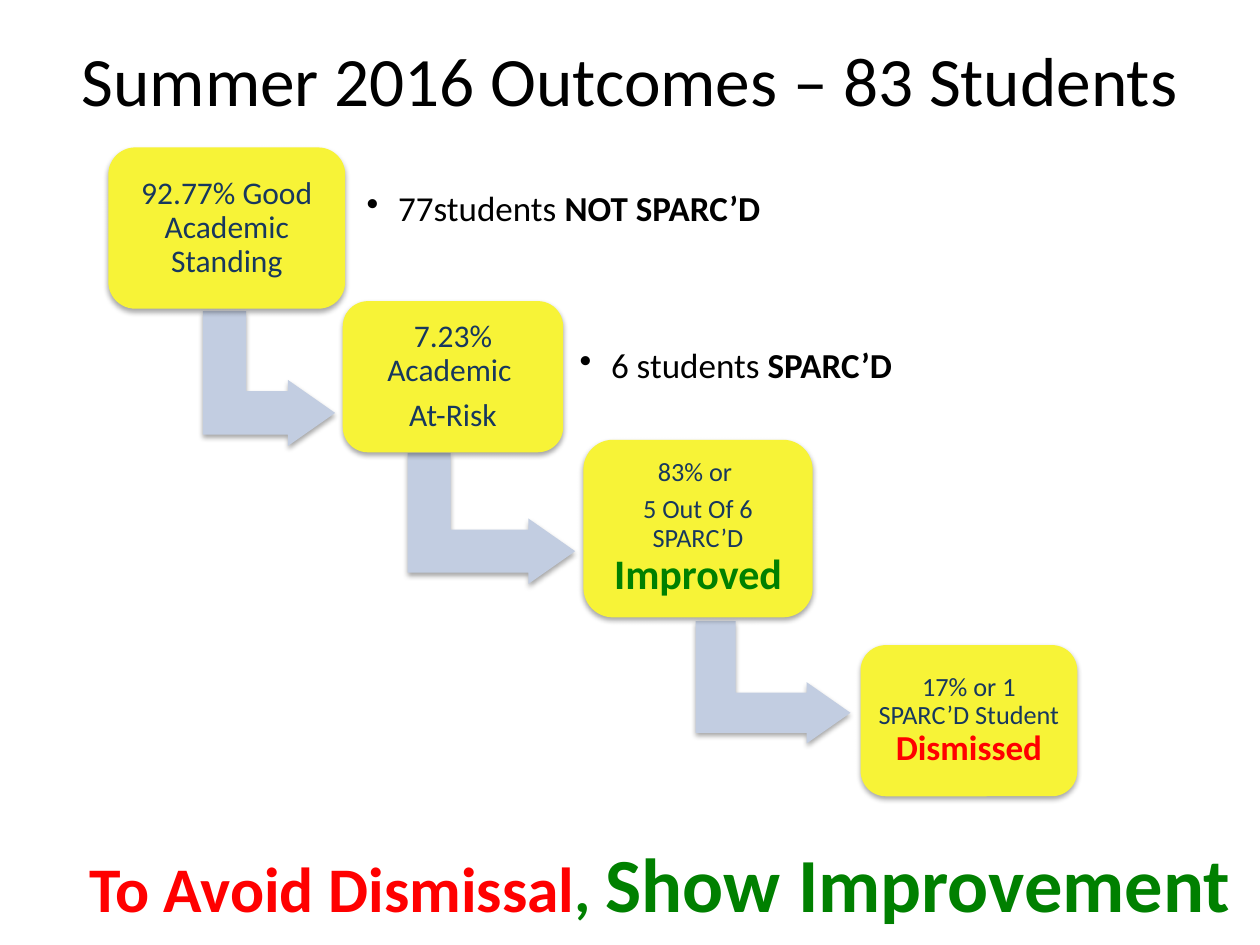
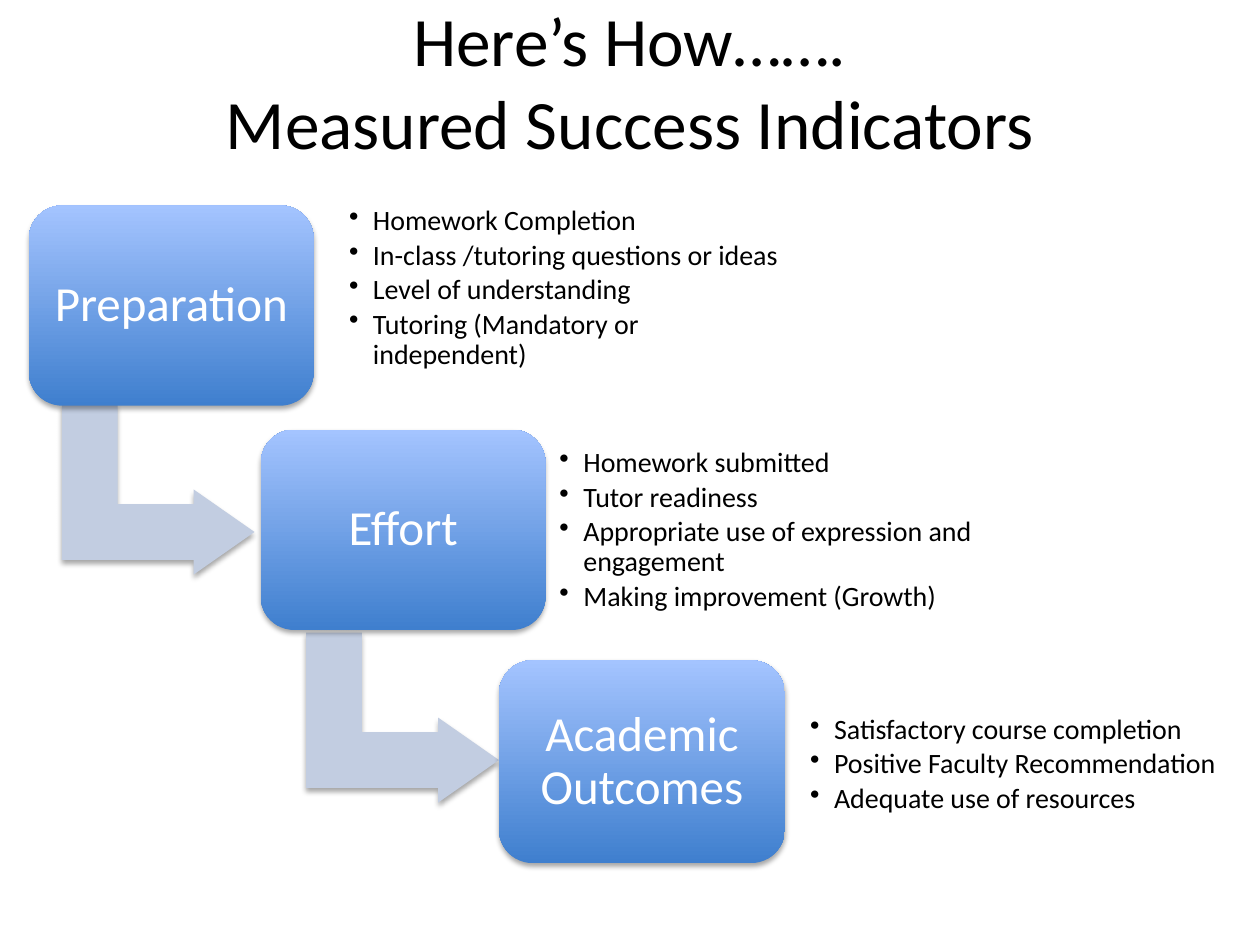
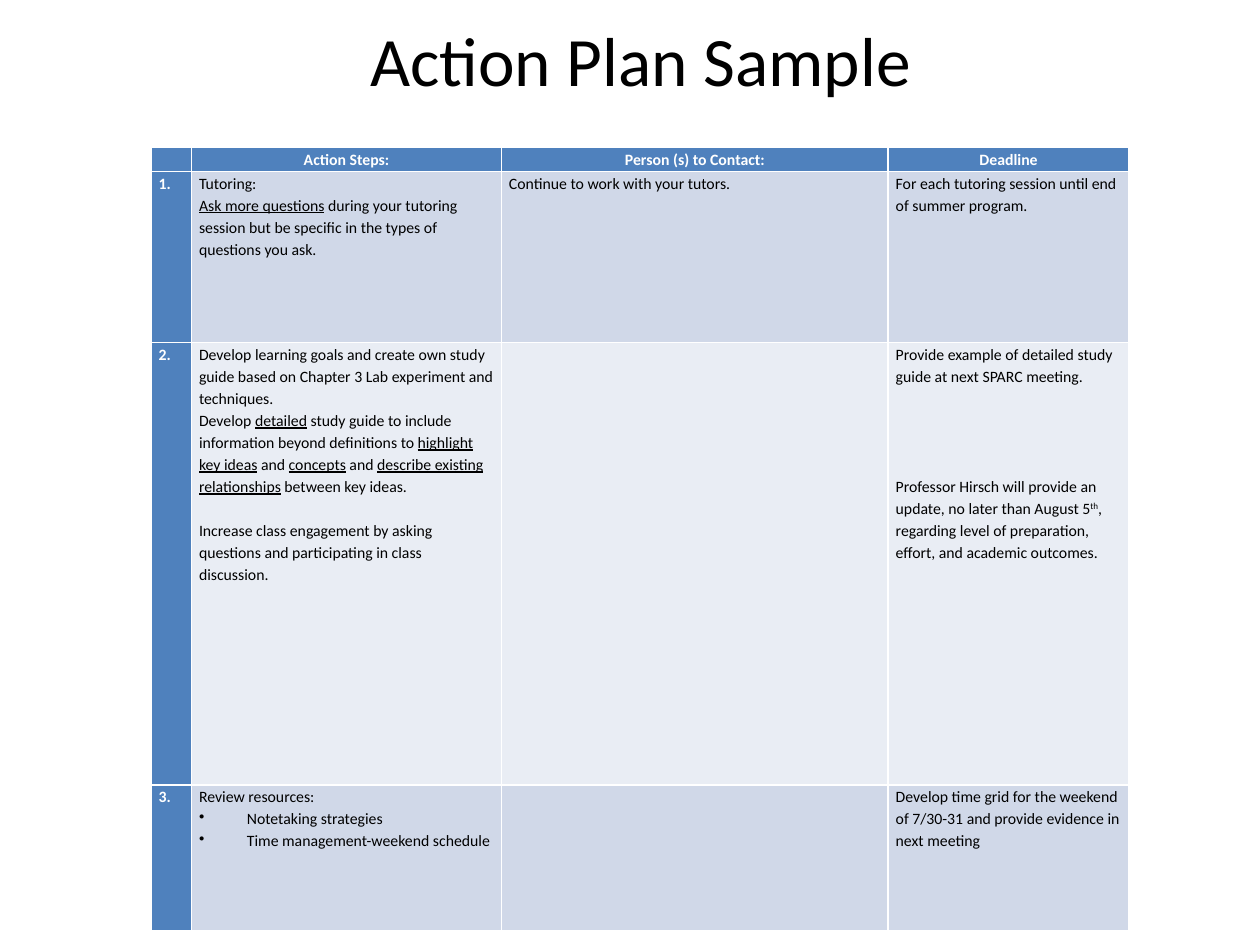
import lxml.etree
import pptx
import pptx.dml.color
import pptx.enum.shapes
import pptx.enum.text
import pptx.oxml.ns
import pptx.util

BLACK = pptx.dml.color.RGBColor(0x00, 0x00, 0x00)
WHITE = pptx.dml.color.RGBColor(0xFF, 0xFF, 0xFF)
NAVY = pptx.dml.color.RGBColor(0x17, 0x37, 0x5E)
GREEN = pptx.dml.color.RGBColor(0x00, 0x80, 0x00)
RED = pptx.dml.color.RGBColor(0xFF, 0x00, 0x00)
YELLOW = pptx.dml.color.RGBColor(0xF7, 0xF3, 0x37)
PALE = pptx.dml.color.RGBColor(0xC2, 0xCD, 0xE1)
DEEP = pptx.dml.color.RGBColor(0x3F, 0x7F, 0xCE)
LIGHT = pptx.dml.color.RGBColor(0xA4, 0xC4, 0xFF)
HEAD = pptx.dml.color.RGBColor(0x4F, 0x81, 0xBD)
BANDS = [pptx.dml.color.RGBColor(0xD0, 0xD8, 0xE8),
         pptx.dml.color.RGBColor(0xE9, 0xED, 0xF4)]

FONT = "Calibri"
CENTER = pptx.enum.text.PP_ALIGN.CENTER
ROUND = pptx.enum.shapes.MSO_SHAPE.ROUNDED_RECTANGLE
BENT = pptx.enum.shapes.MSO_SHAPE.BENT_UP_ARROW
qn = pptx.oxml.ns.qn


def write(frame, text, size=18, color=BLACK, bold=False, align=None,
          lines=None, before=0, after=0, bullet=0):
    """Add one paragraph; text is a string or a list of (text, run format)."""
    para = frame.add_paragraph() if frame.text else frame.paragraphs[0]
    para.alignment = align
    para.line_spacing = lines
    para.space_before = pptx.util.Pt(before)
    para.space_after = pptx.util.Pt(after)
    if bullet:
        props = para._p.get_or_add_pPr()
        indent = pptx.util.Inches(bullet)
        props.set("marL", str(indent))
        props.set("indent", str(-indent))
        lxml.etree.SubElement(props, qn("a:buChar"), char="•")
    for part, look in [(text, {})] if isinstance(text, str) else text:
        if part == "\n":
            para.add_line_break()
            continue
        run = para.add_run()
        run.text = part
        font = run.font
        font.name = FONT
        font.size = pptx.util.Pt(look.get("size", size))
        font.color.rgb = look.get("color", color)
        font.bold = look.get("bold", bold)
        if "under" in look:
            font.underline = True
        if "raised" in look:
            font._element.set("baseline", "30000")


def draw(slide, kind, box, color, *adjust):
    """Add a borderless shape with the soft shadow."""
    shape = slide.shapes.add_shape(kind, *map(pptx.util.Inches, box))
    for i, value in enumerate(adjust):
        shape.adjustments[i] = value
    shape.fill.solid()
    shape.fill.fore_color.rgb = color
    shape.line.fill.background()
    effects = lxml.etree.SubElement(shape._element.spPr, qn("a:effectLst"))
    shadow = lxml.etree.SubElement(
        effects, qn("a:outerShdw"), blurRad=str(pptx.util.Pt(3.1)),
        dist=str(pptx.util.Pt(1.8)), dir="5400000", rotWithShape="0")
    tint = lxml.etree.SubElement(shadow, qn("a:srgbClr"), val="000000")
    lxml.etree.SubElement(tint, qn("a:alpha"), val="35000")
    return shape


BOLD = {"bold": True}
UNDER = {"under": True}

flows = [
    {
        "title": "Summer 2016 Outcomes – 83 Students",
        "place": (0.5, 0, 9, 1.25),
        "arrows": [(1.6, 2.48, 1.07, 1.05), (3.38, 3.45, 1.04, 1.33),
                   (5.65, 4.8, 0.97, 1.23)],
        "fill": YELLOW, "ink": NAVY,
        "steps": [
            ((0.86, 1.17, 1.88, 1.28), 18, 0.07, ["92.77% Good Academic Standing"]),
            ((2.72, 2.39, 1.75, 1.2), 18, 0.07, ["7.23% Academic ", "At-Risk"]),
            ((4.63, 3.49, 1.82, 1.41), 15, 0.06,
             ["83% or ", [("5 Out Of 6 SPARC’D ", {}),
                          ("Improved", {"size": 24, "color": GREEN, "bold": True})]]),
            ((6.83, 5.12, 1.72, 1.2), 15, 0.06,
             [[("17% or 1 SPARC’D Student ", {}),
               ("Dismissed", {"size": 20, "color": RED, "bold": True})]]),
        ],
        "size": 20, "inset": 0.08, "bullet": 0.25,
        "notes": [
            ((2.83, 1.45, 3.98, 0.44), [[("77students ", {}), ("NOT SPARC’D", BOLD)]]),
            ((4.52, 2.54, 2.85, 0.75), [[("6 students ", {}), ("SPARC’D", BOLD)]]),
        ],
    },
    {
        "title": [("Here’s How…….", {}), ("\n", {}),
                  ("Measured Success Indicators", {})],
        "place": (0.5, 0.01, 9, 1.25),
        "arrows": [(0.58, 3.12, 1.35, 1.53), (2.52, 4.93, 1.35, 1.53)],
        "fill": None, "ink": WHITE,
        "steps": [
            ((0.23, 1.63, 2.26, 1.59), 28, 0.12, ["Preparation"]),
            ((2.07, 3.41, 2.26, 1.59), 28, 0.12, ["Effort"]),
            ((3.96, 5.24, 2.27, 1.61), 28, 0.12, ["Academic Outcomes"]),
        ],
        "size": 16, "inset": 0.07, "bullet": 0.19,
        "notes": [
            ((2.7, 1.73, 3.71, 1.12),
             ["Homework Completion", "In-class /tutoring questions or ideas",
              "Level of understanding", "Tutoring (Mandatory or independent)"]),
            ((4.37, 3.57, 3.75, 1.28),
             ["Homework submitted", "Tutor readiness",
              "Appropriate use of expression and engagement",
              "Making improvement (Growth)"]),
            ((6.36, 5.4, 3.42, 1.34),
             ["Satisfactory course completion", "Positive Faculty Recommendation",
              "Adequate use of resources"]),
        ],
    },
]
plan = {"title": "Action Plan Sample", "place": (1.82, 0.24, 6.53, 0.46)}

deck = pptx.Presentation()
deck.slide_width = pptx.util.Inches(10)
deck.slide_height = pptx.util.Inches(7.5)

# Titles
slides = []
for page in flows + [plan]:
    slide = deck.slides.add_slide(deck.slide_layouts[5])
    slides.append(slide)
    title = slide.shapes.title
    title.left, title.top, title.width, title.height = map(
        pptx.util.Inches, page["place"])
    title.text_frame.word_wrap = True
    title.text_frame.auto_size = pptx.enum.text.MSO_AUTO_SIZE.NONE
    title.text_frame.vertical_anchor = pptx.enum.text.MSO_ANCHOR.MIDDLE
    write(title.text_frame, page["title"], size=39.6, align=CENTER)

# Step-down flows
for slide, flow in zip(slides, flows):
    for box in flow["arrows"]:
        draw(slide, BENT, box, PALE, 0.328, 0.25, 0.358).rotation = 90

    blocks = []
    for box, size, inset, paras in flow["steps"]:
        step = draw(slide, ROUND, box, flow["fill"] or DEEP, 0.167)
        if not flow["fill"]:
            step.fill.gradient()
            step.fill.gradient_angle = 90
            for stop, color in zip(step.fill.gradient_stops, (DEEP, LIGHT)):
                stop.color.rgb = color
        look = {"size": size, "color": flow["ink"], "align": CENTER,
                "after": 0.35 * size}
        blocks.append((step.text_frame, inset, paras, look))
    for box, paras in flow["notes"]:
        note = slide.shapes.add_textbox(*map(pptx.util.Inches, box))
        look = {"size": flow["size"], "bullet": flow["bullet"],
                "after": 0.15 * flow["size"]}
        blocks.append((note.text_frame, flow["inset"], paras, look))

    for frame, inset, paras, look in blocks:
        frame.word_wrap = True
        frame.vertical_anchor = pptx.enum.text.MSO_ANCHOR.MIDDLE
        frame.margin_left = frame.margin_right = pptx.util.Inches(inset)
        frame.margin_top = frame.margin_bottom = pptx.util.Inches(inset)
        for text in paras:
            write(frame, text, lines=0.9, **look)

# Closing message
box = slides[0].shapes.add_textbox(*map(pptx.util.Inches, (0.59, 6.5, 9.29, 1)))
box.text_frame.word_wrap = True
box.text_frame.vertical_anchor = pptx.enum.text.MSO_ANCHOR.MIDDLE
write(box.text_frame,
      [("To Avoid Dismissal", {"color": RED}), (", ", {}),
       ("Show Improvement", {"size": 43.7})],
      size=36.3, color=GREEN, bold=True, align=CENTER)

# Action plan: each cell is a list of (text, paragraph format)
LINE = 12.6
rows = [
    [[], [("Action Steps:", {})], [("Person (s) to Contact:", {})], [("Deadline", {})]],
    [
        [("1.", {})],
        [("Tutoring:", {}),
         ([("Ask more questions", UNDER),
           (" during your tutoring session but be specific in the types of "
            "questions you ask.", {})], {})],
        [("Continue to work with your tutors.", {})],
        [("For each tutoring session until end of summer program.", {})],
    ],
    [
        [("2.", {})],
        [("Develop learning goals and create own study guide based on Chapter 3 "
          "Lab experiment and techniques.", {}),
         ([("Develop ", {}), ("detailed", UNDER),
           (" study guide to include information beyond definitions to ", {}),
           ("highlight key ideas", UNDER), (" and ", {}), ("concepts", UNDER),
           (" and ", {}), ("describe existing relationships", UNDER),
           (" between key ideas.", {})], {}),
         ("Increase class engagement by asking questions and participating in "
          "class discussion.", {"before": LINE})],
        [],
        [("Provide example of detailed study guide at next SPARC meeting.", {}),
         ([("Professor Hirsch will provide an update, no later than August 5", {}),
           ("th", {"raised": True}),
           (", regarding level of preparation, effort, and academic outcomes.", {})],
          {"before": 4 * LINE})],
    ],
    [
        [("3.", {})],
        [("Review resources:", {}),
         ("Notetaking strategies", {"bullet": 0.38}),
         ("Time management-weekend schedule", {"bullet": 0.38})],
        [],
        [("Develop time grid for the weekend of 7/30-31 and provide evidence in "
          "next meeting", {})],
    ],
]
table = slides[2].shapes.add_table(
    4, 4, *map(pptx.util.Inches, (1.2, 1.17, 7.76, 6.22))).table
table.first_col = True
for col, width in zip(table.columns, (0.32, 2.46, 3.07, 1.91)):
    col.width = pptx.util.Inches(width)
for row, height in zip(table.rows, (0.19, 1.36, 3.51, 1.16)):
    row.height = pptx.util.Inches(height)

for r, row in enumerate(rows):
    for c, paras in enumerate(row):
        cell = table.cell(r, c)
        label = r == 0 or c == 0
        cell.fill.solid()
        cell.fill.fore_color.rgb = HEAD if label else BANDS[(r - 1) % 2]
        cell.margin_left = cell.margin_right = pptx.util.Inches(0.06)
        cell.margin_top = cell.margin_bottom = 0
        for text, look in paras:
            write(cell.text_frame, text, size=9, color=WHITE if label else BLACK,
                  bold=label, align=None if r else CENTER, lines=1.15, **look)
        if not paras:
            end = cell.text_frame.paragraphs[0]._p.get_or_add_endParaRPr()
            end.set("sz", "900")

deck.save("out.pptx")
